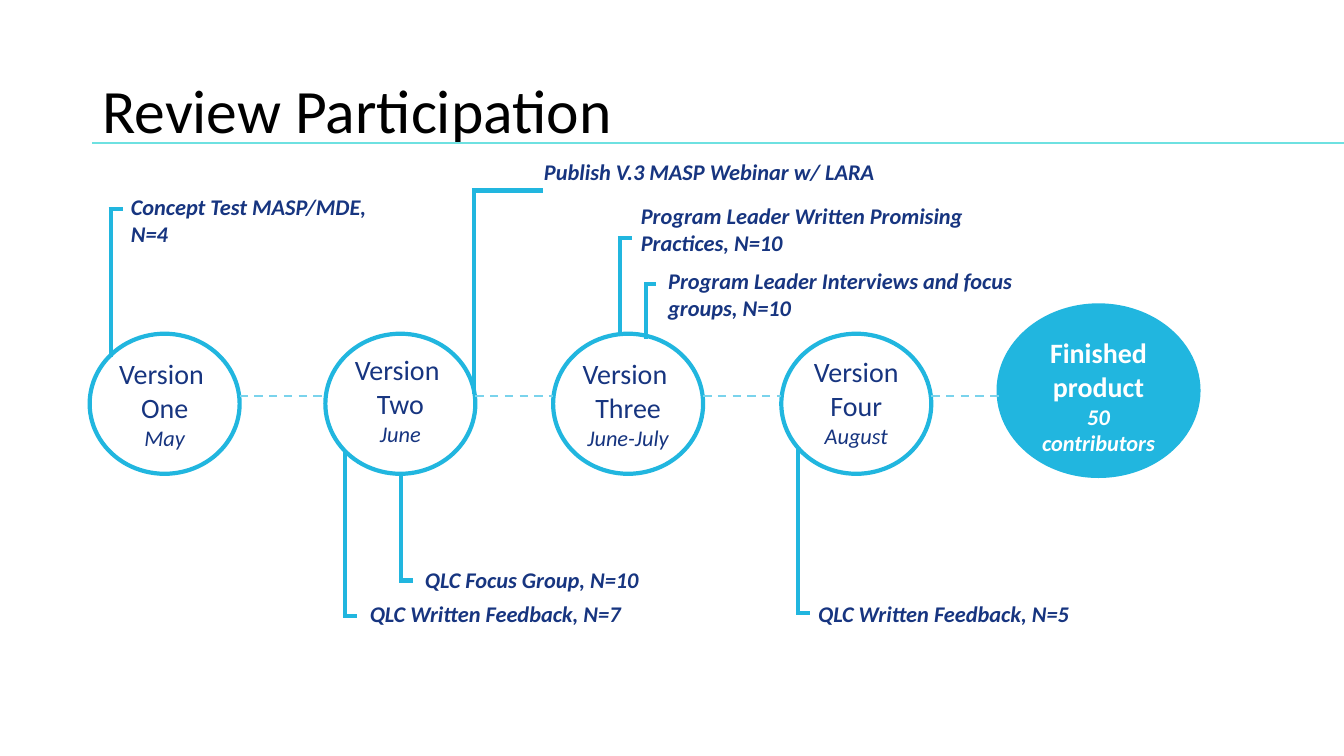
from pptx import Presentation
from pptx.enum import dml, shapes, text
from pptx.dml.color import RGBColor
from pptx.oxml.ns import qn
from pptx.util import Cm, Pt

WIDE, HIGH = 33.87, 19.05
HUES = {"ink": "000000", "navy": "173580", "blue": "21B6DF",
        "pale": "7AD3EC", "aqua": "6EE1E1", "white": "FFFFFF"}
TITLE = "Review Participation"

# left, label top, label lines
STAGES = [
    (2.26, 8.86, ["Version ", "One", "May"]),
    (8.2, 8.76, ["Version ", "Two", "June"]),
    (13.94, 8.86, ["Version ", "Three", "June-July"]),
    (19.69, 8.81, ["Version", "Four", "August"]),
]
FINAL = (25.22, 8.33, ["Finished product", "50 contributors"])

# wording, stem x, stem start y, corner y, tick length, text left, top, width
NOTES = [
    ("Concept Test MASP/MDE, N=4", 2.79, 8.99, 5.26, 0.31, 3.05, 4.75, 7.49),
    ("Publish V.3 MASP Webinar w/ LARA", 11.94, 9.93, 4.8, 1.75, 13.46, 3.86, 14.12),
    ("QLC Written Feedback, N=7", 8.69, 11.35, 15.52, 0.3, 9.07, 15.01, 9.58),
    ("QLC Focus Group, N=10", 10.11, 11.96, 14.63, 0.3, 10.46, 14.15, 10.16),
    ("QLC Written Feedback, N=5", 20.12, 11.3, 15.44, 0.3, 20.37, 14.99, 9.73),
    ("Program Leader Written Promising Practices, N=10",
     15.62, 8.46, 5.99, 0.3, 15.9, 4.98, 10.01),
    ("Program Leader Interviews and focus groups, N=10",
     16.28, 8.53, 7.16, 0.25, 16.59, 6.6, 9.32),
]
RING = (8.41, 3.78, 3.53)
DISC = (7.75, 4.93, 4.19)
LINK_Y = 9.98
HALF = 0.05


def tint(name):
    """Return the named colour."""
    return RGBColor.from_string(HUES[name])


def write(slide, lines, x, y, w, h, size=16, hue="navy", bold=False,
          slant=False, align="LEFT", anchor="TOP", last=None, gap=1.0):
    """Add a text box; last holds the size of an italic closing line."""
    frame = slide.shapes.add_textbox(Cm(x), Cm(y), Cm(w), Cm(h)).text_frame
    frame.word_wrap = True
    frame.vertical_anchor = text.MSO_ANCHOR[anchor]
    for i, line in enumerate(lines):
        para = frame.paragraphs[0] if i == 0 else frame.add_paragraph()
        para.alignment = text.PP_ALIGN[align]
        para.line_spacing = gap
        end = last and i == len(lines) - 1
        run = para.add_run()
        run.text = line
        font = run.font
        font.name, font.bold = "Calibri", bold
        font.size = Pt(last if end else size)
        font.italic = bool(slant or end)
        font.color.rgb = tint(hue)


def rule(slide, x1, y1, x2, y2, hue="blue", width=3, dash=False):
    """Draw a straight line without a shadow."""
    line = slide.shapes.add_connector(
        shapes.MSO_CONNECTOR.STRAIGHT, Cm(x1), Cm(y1), Cm(x2), Cm(y2))
    line.line.color.rgb = tint(hue)
    line.line.width = Pt(width)
    if dash:
        line.line.dash_style = dml.MSO_LINE.DASH
    props = line._element.spPr
    props.append(props.makeelement(qn("a:effectLst"), {}))


def oval(slide, x, y, w, h, fill, width):
    """Draw an outlined ellipse."""
    shape = slide.shapes.add_shape(
        shapes.MSO_SHAPE.OVAL, Cm(x), Cm(y), Cm(w), Cm(h))
    shape.shadow.inherit = False
    shape.fill.solid()
    shape.fill.fore_color.rgb = tint(fill)
    shape.line.color.rgb = tint("blue")
    shape.line.width = Pt(width)


def main():
    """Build the slide and save it."""
    deck = Presentation()
    deck.slide_width, deck.slide_height = Cm(WIDE), Cm(HIGH)
    slide = deck.slides.add_slide(deck.slide_layouts[6])

    write(slide, [TITLE], 2.33, 1.02, 29.21, 3.68, size=44, hue="ink",
          anchor="MIDDLE", gap=0.9)
    rule(slide, 2.33, 3.61, WIDE, 3.61, hue="aqua", width=1.5)

    top, wide, high = RING
    for x, y, lines in STAGES:
        oval(slide, x, top, wide, high, "white", 3)
        write(slide, lines, x + wide / 2 - 2.08, y, 4.16, 2.67,
              size=20, align="CENTER", last=16)

    x, y, lines = FINAL
    top, broad, high = DISC
    oval(slide, x, top, broad, high, "blue", 6)
    write(slide, lines, x + broad / 2 - 1.9, y, 3.8, 3.35, size=20,
          hue="white", bold=True, align="CENTER", last=16)

    for left, right in zip(STAGES, STAGES[1:] + [FINAL]):
        rule(slide, left[0] + wide, LINK_Y, right[0], LINK_Y,
             hue="pale", width=1.5, dash=True)

    for note, stem, start, turn, tick, x, y, w in NOTES:
        rule(slide, stem, start, stem, turn)
        rule(slide, stem - HALF, turn, stem + tick, turn)
        write(slide, [note], x, y, w, 0.94, bold=True, slant=True)

    deck.save("out.pptx")


if __name__ == "__main__":
    main()
